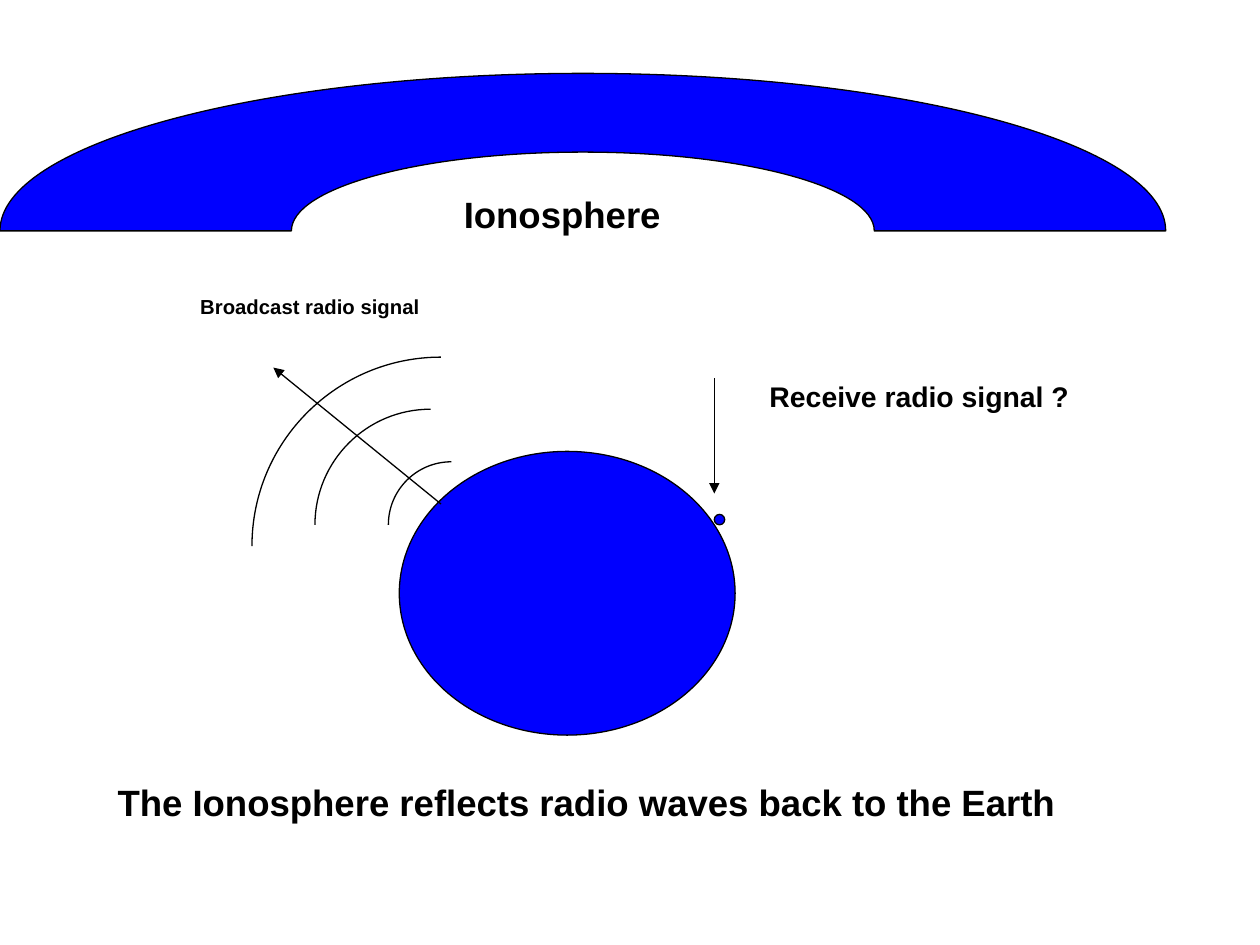
from math import cos, radians, sin

from lxml.etree import SubElement
from pptx import Presentation
from pptx.dml.color import RGBColor
from pptx.enum.shapes import MSO_CONNECTOR as CONNECTOR, MSO_SHAPE as SHAPE
from pptx.enum.text import PP_ALIGN as ALIGN
from pptx.oxml.ns import qn
from pptx.util import Cm, Pt

COLORS = {"blue": "0000FF", "black": "000000"}
FONT = "Arial"
BEZIER = 0.5523  # handle length of a quarter circle of radius 1


def color(name):
    return RGBColor.from_string(COLORS[name])


def style_line(item):
    item.line.color.rgb = color("black")
    item.line.width = Pt(0.75)


def style_shape(shape, fill=None):
    shape.shadow.inherit = False
    style_line(shape)
    if fill:
        shape.fill.solid()
        shape.fill.fore_color.rgb = color(fill)
    else:
        shape.fill.background()


def add_ellipse(page, left, top, width, height):
    shape = page.shapes.add_shape(SHAPE.OVAL, Cm(left), Cm(top), Cm(width), Cm(height))
    style_shape(shape, "blue")


def quarter(center_x, center_y, radius_x, radius_y, start, end):
    """Four Bezier points of a quarter ellipse, angles counter-clockwise."""
    turn = BEZIER if end > start else -BEZIER
    points = []
    for angle, handle in ((start, 0), (start, turn), (end, -turn), (end, 0)):
        x, y = cos(radians(angle)), sin(radians(angle))
        points.append((Cm(round(center_x + radius_x * (x - handle * y), 3)),
                       Cm(round(center_y - radius_y * (y + handle * x), 3))))
    return points


def add_outline(page, curves, fill=None):
    """Freeform through the curves, with straight lines over any gaps."""
    points, curve_starts = list(curves[0][:1]), []
    for curve in curves:
        if curve[0] != points[-1]:
            points.append(curve[0])
        curve_starts.append(len(points) - 1)
        points += curve[1:]
    builder = page.shapes.build_freeform(*points[0])
    builder.add_line_segments(points[1:], close=fill is not None)
    shape = builder.convert_to_shape()

    # Turn each run of three segments into one cubic curve
    segments = list(shape._element.iter(qn("a:lnTo")))
    for first in curve_starts:
        bend, *others = segments[first:first + 3]
        cubic = bend.getparent().makeelement(qn("a:cubicBezTo"))
        bend.addprevious(cubic)
        for segment in (bend, *others):
            cubic.append(segment[0])
            segment.getparent().remove(segment)
    style_shape(shape, fill)
    return shape


def add_arrow(page, start_x, start_y, end_x, end_y):
    arrow = page.shapes.add_connector(
        CONNECTOR.STRAIGHT, Cm(start_x), Cm(start_y), Cm(end_x), Cm(end_y))
    style_line(arrow)
    SubElement(arrow.line._get_or_add_ln(), qn("a:tailEnd"), type="triangle")
    SubElement(arrow._element.spPr, qn("a:effectLst"))


def add_label(page, text, left, top, width, height, size, align=ALIGN.CENTER):
    """Bold label in raised (30% superscript) text."""
    box = page.shapes.add_textbox(Cm(left), Cm(top), Cm(width), Cm(height))
    box.text_frame.word_wrap = True
    box.text_frame.text = text
    para = box.text_frame.paragraphs[0]
    para.alignment = align
    span = para.runs[0]
    span.font.name = FONT
    span.font.size = Pt(size)
    span.font.bold = True
    span.font.color.rgb = color("black")
    span._r.get_or_add_rPr().set("baseline", "30000")


def draw_broadcast(page, left, top, width, height):
    # Wave fronts: centre offsets and radius
    for offset_x, offset_y, radius in ((7.19, 4.86, 1.27), (6.77, 4.86, 2.33),
                                       (6.98, 5.29, 3.81)):
        add_outline(page, [quarter(left + offset_x, top + offset_y,
                                   radius, radius, 90, 180)])
    # Direction of travel
    add_arrow(page, left + 6.98, top + 4.44, left + 3.6, top + 1.69)
    add_label(page, "Broadcast radio signal", left, top, width, 1.09, 20)


def draw_receiver(page, left, top, width, height):
    # Receiver and incoming signal
    dot = 0.21
    add_ellipse(page, left, top + height - dot, dot, dot)
    add_arrow(page, left, top + 0.22, left, top + 2.55)
    add_label(page, "Receive radio signal ?", left + 0.21, top, width - 0.21, 1.07, 28)


def draw_ionosphere(page, left, top, width, height):
    # Upper half of a ring whose inner edge is half the size of the outer one
    center_x, base = left + width / 2, top + height / 2
    inner = (center_x, base, width / 4, height / 4)
    outer = (center_x, base, width / 2, height / 2)
    ring = add_outline(page, [quarter(*inner, 180, 90), quarter(*inner, 90, 0),
                              quarter(*outer, 0, 90), quarter(*outer, 90, 180)], "blue")
    # The frame spans the whole ring
    outline = next(ring._element.iter(qn("a:path")))
    outline.set("h", str(2 * int(outline.get("h"))))
    ring.height = 2 * ring.height
    add_label(page, "Ionosphere", left + 9.1, top + 2.12, 5.08, 1.27, 36, ALIGN.LEFT)


def main():
    deck = Presentation()
    deck.slide_width, deck.slide_height = Cm(25.4), Cm(19.05)
    page = deck.slides.add_slide(deck.slide_layouts[6])

    # Earth
    add_ellipse(page, 8.05, 9.1, 6.77, 5.72)
    draw_broadcast(page, 1.91, 5.72, 8.68, 9.1)
    draw_receiver(page, 14.4, 7.4, 8.05, 3.18)
    draw_ionosphere(page, 0, 1.48, 23.5, 6.35)
    # Caption
    add_label(page, "The Ionosphere reflects radio waves back to the Earth",
              2.12, 15.45, 22.25, 1.78, 36, ALIGN.LEFT)

    deck.save("out.pptx")


if __name__ == "__main__":
    main()
